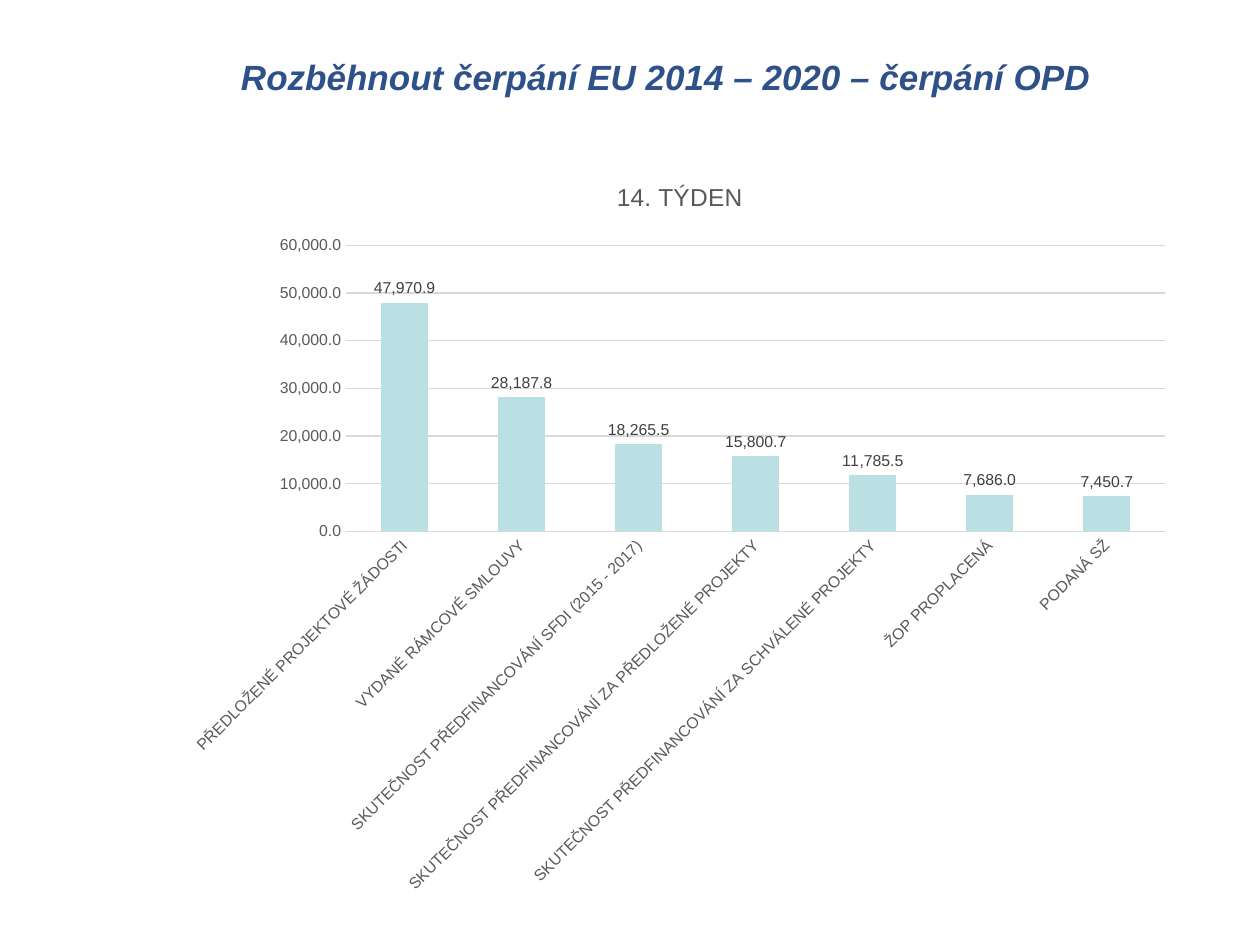
import pptx
import pptx.chart.data
import pptx.dml.color
import pptx.enum.chart
import pptx.enum.text
import pptx.oxml
import pptx.oxml.ns
import pptx.util
from dataclasses import dataclass

Pt = pptx.util.Pt


@dataclass(frozen=True)
class Theme:
    font: str = "Arial"
    heading: str = "2E518A"
    bar: str = "BBE0E3"
    muted: str = "595959"
    label: str = "404040"
    grid: str = "D9D9D9"
    heading_size: int = 20
    chart_title_size: int = 14
    chart_size: int = 10
    small_size: int = 9


THEME = Theme()
NUMBER_FORMAT = "#,##0.0"
WEEK = "14. TÝDEN"
FUNDING = {
    "PŘEDLOŽENÉ PROJEKTOVÉ ŽÁDOSTI": 47970.9,
    "VYDANÉ RÁMCOVÉ SMLOUVY": 28187.8,
    "SKUTEČNOST PŘEDFINANCOVÁNÍ SFDI (2015 - 2017)": 18265.5,
    "SKUTEČNOST PŘEDFINANCOVÁNÍ ZA PŘEDLOŽENÉ PROJEKTY": 15800.7,
    "SKUTEČNOST PŘEDFINANCOVÁNÍ ZA SCHVÁLENÉ PROJEKTY": 11785.5,
    "ŽOP PROPLACENÁ": 7686.0,
    "PODANÁ SŽ": 7450.7,
}


def rgb(value):
    return pptx.dml.color.RGBColor.from_string(value)


def style_font(font, size, color, bold=False, italic=False):
    font.name = THEME.font
    font.size = Pt(size)
    font.bold = bold
    font.italic = italic
    font.color.rgb = rgb(color)


def add_title(s, text, left, top, width, height):
    sp = s.shapes.title
    sp.left, sp.top, sp.width, sp.height = map(Pt, (left, top, width, height))
    tf = sp.text_frame
    tf.word_wrap = True
    tf.vertical_anchor = pptx.enum.text.MSO_ANCHOR.MIDDLE
    p = tf.paragraphs[0]
    p.alignment = pptx.enum.text.PP_ALIGN.CENTER
    r = p.add_run()
    r.text = text
    style_font(r.font, THEME.heading_size, THEME.heading, bold=True, italic=True)


def style_axis(axis):
    axis.major_tick_mark = pptx.enum.chart.XL_TICK_MARK.NONE
    axis.minor_tick_mark = pptx.enum.chart.XL_TICK_MARK.NONE
    axis.format.line.fill.background()
    style_font(axis.tick_labels.font, THEME.small_size, THEME.muted)


def place_plot(chart, x, y, w, h):
    """Fix the inner plot area, in fractions of the chart frame."""
    area = chart._chartSpace.chart.plotArea
    for old in area.findall(pptx.oxml.ns.qn("c:layout")):
        area.remove(old)
    area.insert(0, pptx.oxml.parse_xml(
        f'<c:layout {pptx.oxml.ns.nsdecls("c")}><c:manualLayout>'
        '<c:layoutTarget val="inner"/><c:xMode val="edge"/><c:yMode val="edge"/>'
        f'<c:x val="{x}"/><c:y val="{y}"/><c:w val="{w}"/><c:h val="{h}"/>'
        '</c:manualLayout></c:layout>'))


def add_column_chart(s, name, values, left, top, width, height):
    data = pptx.chart.data.CategoryChartData(number_format=NUMBER_FORMAT)
    data.categories = list(values)
    data.add_series(name, list(values.values()))
    kind = pptx.enum.chart.XL_CHART_TYPE.COLUMN_CLUSTERED
    chart = s.shapes.add_chart(
        kind, Pt(left), Pt(top), Pt(width), Pt(height), data).chart
    style_font(chart.font, THEME.chart_size, "000000")
    chart.has_legend = False

    # Chart title
    r = chart.chart_title.text_frame.paragraphs[0].add_run()
    r.text = name
    style_font(r.font, THEME.chart_title_size, THEME.muted)
    chart.chart_title.include_in_layout = False

    # Columns and their values
    plot = chart.plots[0]
    plot.gap_width = 150
    plot.vary_by_categories = False
    fill = plot.series[0].format.fill
    fill.solid()
    fill.fore_color.rgb = rgb(THEME.bar)
    plot.has_data_labels = True
    labels = plot.data_labels
    labels.show_value = True
    labels.number_format = NUMBER_FORMAT
    labels.number_format_is_linked = False
    labels.position = pptx.enum.chart.XL_LABEL_POSITION.OUTSIDE_END
    style_font(labels.font, THEME.small_size, THEME.label)

    # Axes, with slanted category names
    for axis in (chart.category_axis, chart.value_axis):
        style_axis(axis)
    body = chart.category_axis._element.txPr.bodyPr
    body.set("rot", "-2700000")
    body.set("vert", "horz")
    axis = chart.value_axis
    axis.minimum_scale, axis.maximum_scale, axis.major_unit = 0, 60000, 10000
    axis.tick_labels.number_format = NUMBER_FORMAT
    axis.tick_labels.number_format_is_linked = False
    line = axis.major_gridlines.format.line
    line.color.rgb = rgb(THEME.grid)
    line.width = Pt(0.75)
    return chart


def main():
    prs = pptx.Presentation()
    prs.slide_width, prs.slide_height = Pt(720), Pt(540)
    s = prs.slides.add_slide(prs.slide_layouts[5])

    # Heading
    add_title(s, "Rozběhnout čerpání EU 2014 – 2020 – čerpání OPD", 111, 15, 539, 57)

    # Weekly funding chart
    chart = add_column_chart(s, WEEK, FUNDING, 99.5, 88.5, 578, 430.5)
    place_plot(chart, 0.17, 0.12, 0.81, 0.38)

    prs.save("out.pptx")


if __name__ == "__main__":
    main()
